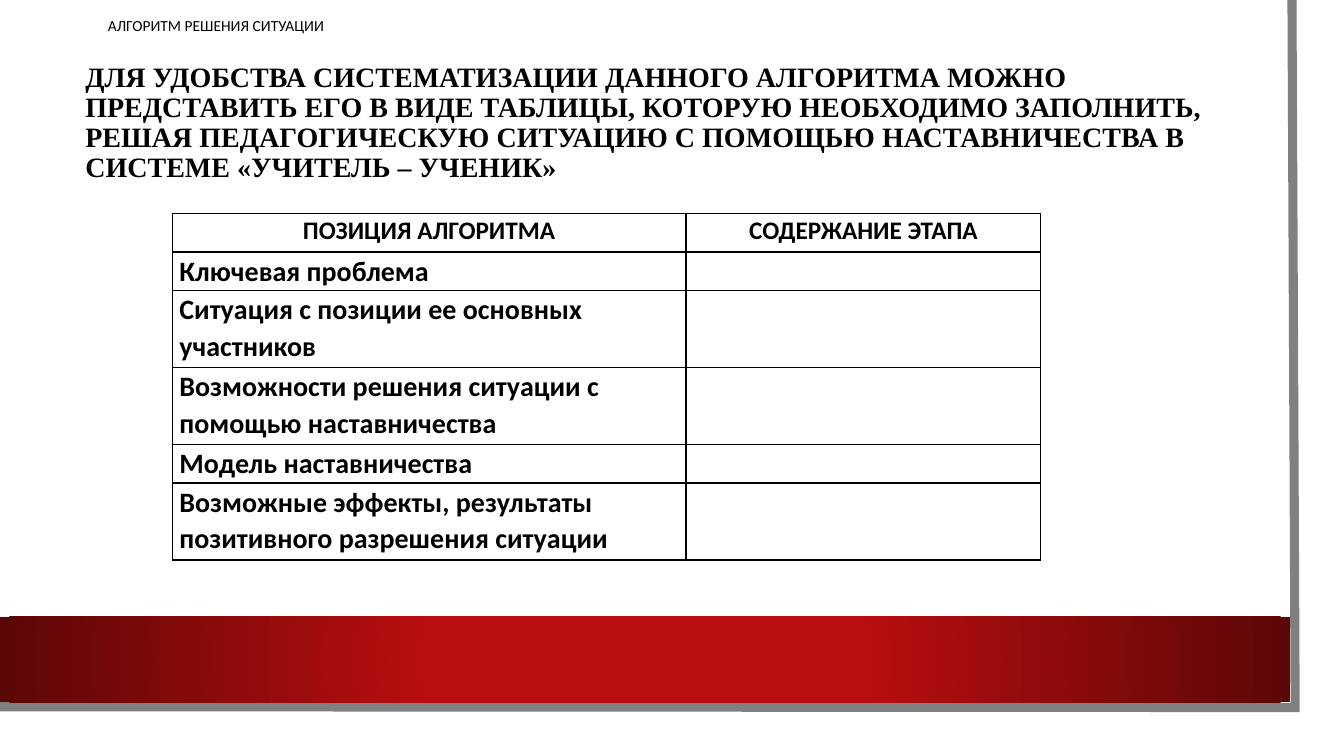
from lxml.etree import SubElement
from pptx import Presentation
from pptx.dml.color import RGBColor
from pptx.enum.shapes import MSO_SHAPE
from pptx.enum.text import MSO_ANCHOR, PP_ALIGN
from pptx.oxml import parse_xml
from pptx.oxml.ns import nsdecls, qn
from pptx.util import Cm, Pt

SECTION = "АЛГОРИТМ РЕШЕНИЯ СИТУАЦИИ"
TITLE = (
    "ДЛЯ УДОБСТВА СИСТЕМАТИЗАЦИИ ДАННОГО АЛГОРИТМА МОЖНО ПРЕДСТАВИТЬ ЕГО "
    "В ВИДЕ ТАБЛИЦЫ, КОТОРУЮ НЕОБХОДИМО ЗАПОЛНИТЬ, РЕШАЯ ПЕДАГОГИЧЕСКУЮ "
    "СИТУАЦИЮ С ПОМОЩЬЮ НАСТАВНИЧЕСТВА В СИСТЕМЕ «УЧИТЕЛЬ – УЧЕНИК»"
)
HEADINGS = ("ПОЗИЦИЯ АЛГОРИТМА", "СОДЕРЖАНИЕ ЭТАПА")
# Position in the algorithm, number of text lines it takes
POSITIONS = [
    ("Ключевая проблема", 1),
    ("Ситуация с позиции ее основных участников", 2),
    ("Возможности решения ситуации с помощью наставничества", 2),
    ("Модель наставничества", 1),
    ("Возможные эффекты, результаты позитивного разрешения ситуации", 2),
]
COLUMN_WIDTHS = (Cm(12.95), Cm(8.94))
LINE_HEIGHT = Cm(0.97)
FRAME_POINTS = [(Cm(32.56), 0), (Cm(32.64), Cm(17.83)), (Cm(-0.08), Cm(17.81))]

BLACK = RGBColor(0x00, 0x00, 0x00)
GREY = RGBColor(0x80, 0x80, 0x80)
RED = RGBColor(0xB8, 0x0E, 0x0F)
DARK_RED = RGBColor(0x5C, 0x07, 0x07)


def add_run(paragraph, text, size, font="Calibri", bold=False):
    run = paragraph.add_run()
    run.text = text
    run.font.size = Pt(size)
    run.font.name = font
    run.font.bold = bold
    run.font.color.rgb = BLACK


def add_text_box(slide, left, top, width, height):
    """Add a wrapping, vertically centred box and return its text frame."""
    frame = slide.shapes.add_textbox(left, top, width, height).text_frame
    frame.word_wrap = True
    frame.vertical_anchor = MSO_ANCHOR.MIDDLE
    return frame


def add_frame(slide):
    """Draw the grey edge along the right and bottom of the page."""
    builder = slide.shapes.build_freeform(*FRAME_POINTS[0])
    builder.add_line_segments(FRAME_POINTS[1:], close=False)
    edge = builder.convert_to_shape()
    edge.shadow.inherit = False
    edge.fill.background()
    edge.line.color.rgb = GREY
    edge.line.width = Pt(6.5)
    SubElement(edge.line._get_or_add_ln(), qn("a:miter"), lim="800000")


def add_band(slide):
    """Draw the red band, darkening away from its centre."""
    band = slide.shapes.add_shape(
        MSO_SHAPE.RECTANGLE, 0, Cm(15.54), Cm(32.51), Cm(2.16))
    band.shadow.inherit = False
    band.line.fill.background()
    stops = "".join(
        f'<a:gs pos="{percent * 1000}"><a:srgbClr val="{color}"/></a:gs>'
        for percent, color in ((34, RED), (100, DARK_RED)))
    gradient = parse_xml(
        f'<a:gradFill {nsdecls("a")} rotWithShape="1"><a:gsLst>{stops}</a:gsLst>'
        '<a:path path="circle"><a:fillToRect l="50000" t="50000" r="50000" '
        'b="50000"/></a:path></a:gradFill>')
    band._element.spPr.find(qn("a:prstGeom")).addnext(gradient)


def format_cell(cell):
    cell.margin_left = cell.margin_right = Cm(0.18)
    cell.margin_top = cell.margin_bottom = 0
    properties = cell._tc.get_or_add_tcPr()
    for side in ("lnL", "lnR", "lnT", "lnB"):
        border = SubElement(properties, qn(f"a:{side}"), w=str(Pt(1)))
        fill = SubElement(border, qn("a:solidFill"))
        SubElement(fill, qn("a:srgbClr"), val=str(BLACK))
    cell.fill.background()


def write_cell(cell, text, size, align):
    paragraph = cell.text_frame.paragraphs[0]
    paragraph.alignment = align
    paragraph.line_spacing = 1.07
    add_run(paragraph, text, size, bold=True)


def add_algorithm_table(slide):
    line_counts = [1] + [lines for _, lines in POSITIONS]
    table = slide.shapes.add_table(
        len(line_counts), len(HEADINGS), Cm(4.34), Cm(5.38),
        sum(COLUMN_WIDTHS), LINE_HEIGHT * sum(line_counts)).table
    table.first_row = table.horz_banding = False
    for column, width in zip(table.columns, COLUMN_WIDTHS):
        column.width = width
    for row, lines in zip(table.rows, line_counts):
        row.height = LINE_HEIGHT * lines
    for cell in table.iter_cells():
        format_cell(cell)
    for column, heading in enumerate(HEADINGS):
        write_cell(table.cell(0, column), heading, 18, PP_ALIGN.CENTER)
    for row, (position, _) in enumerate(POSITIONS, start=1):
        write_cell(table.cell(row, 0), position, 20, PP_ALIGN.LEFT)


def main():
    presentation = Presentation()
    presentation.slide_width = Cm(33.87)
    presentation.slide_height = Cm(19.05)
    slide = presentation.slides.add_slide(presentation.slide_layouts[6])

    add_frame(slide)
    add_band(slide)

    title = add_text_box(slide, Cm(1.9), Cm(1.9), Cm(28.88), Cm(3.2))
    title.margin_bottom = Cm(0.9)
    title.paragraphs[0].line_spacing = 0.9
    add_run(title.paragraphs[0], TITLE, 20, "Times New Roman", bold=True)

    add_algorithm_table(slide)

    section = add_text_box(slide, 0, 0, Cm(33.87), Cm(1.27))
    section.margin_left = Cm(2.72)
    add_run(section.paragraphs[0], SECTION, 11)

    presentation.save("out.pptx")


if __name__ == "__main__":
    main()
